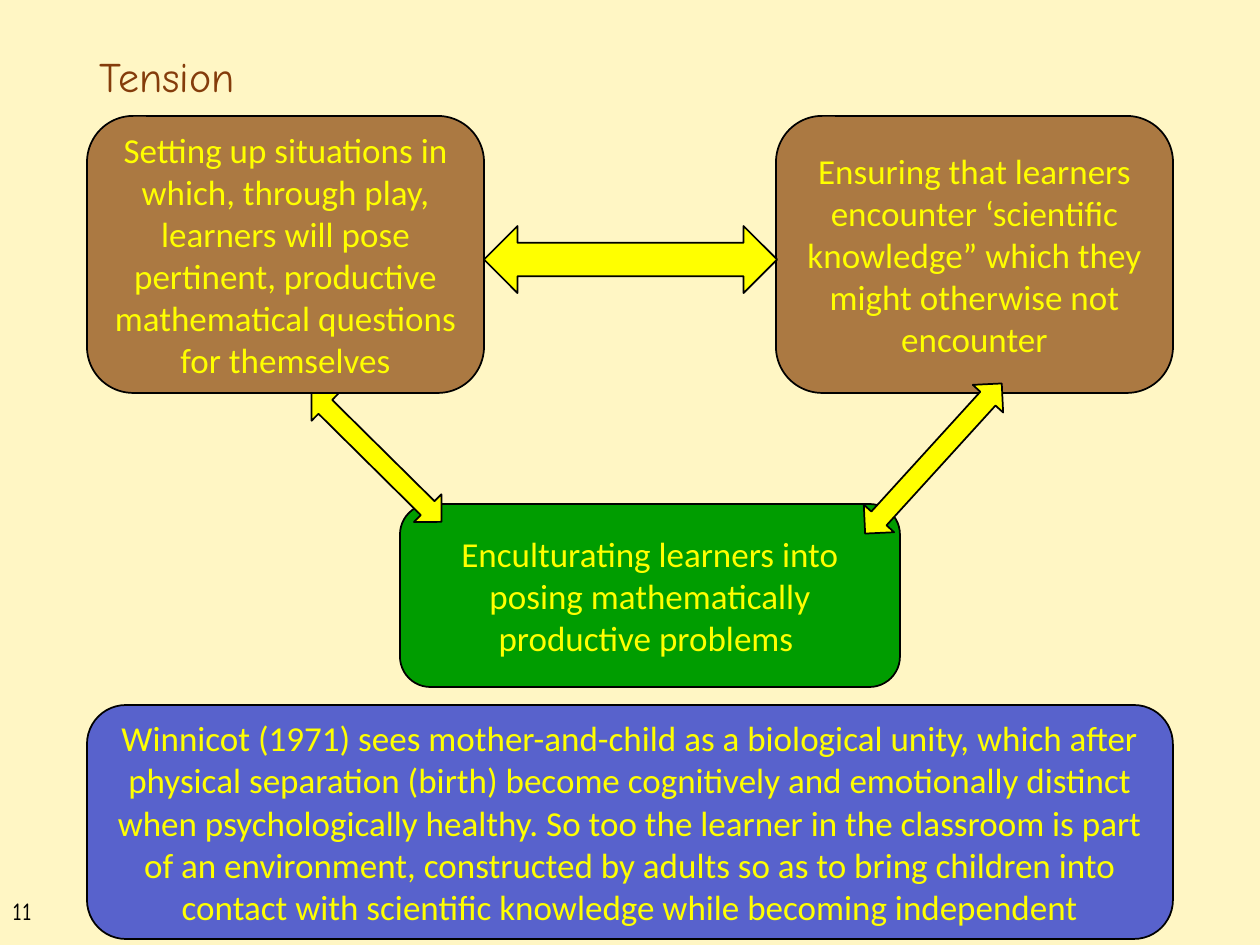
from pptx import Presentation
from pptx.dml.color import RGBColor
from pptx.enum.shapes import MSO_SHAPE
from pptx.enum.text import MSO_ANCHOR, PP_ALIGN
from pptx.util import Pt

PX = 914400 / 126
ROUND, ARROW = MSO_SHAPE.ROUNDED_RECTANGLE, MSO_SHAPE.LEFT_RIGHT_ARROW
TOP, MIDDLE = MSO_ANCHOR.TOP, MSO_ANCHOR.MIDDLE
LEFT, CENTER = PP_ALIGN.LEFT, PP_ALIGN.CENTER
CREAM = RGBColor(0xFF, 0xF6, 0xC4)
RUST = RGBColor(0x84, 0x3C, 0x0B)
BROWN = RGBColor(0xAB, 0x79, 0x42)
GREEN = RGBColor(0x00, 0x9D, 0x00)
BLUE = RGBColor(0x58, 0x62, 0xCC)
YELLOW = RGBColor(0xFF, 0xFF, 0x00)
BLACK = RGBColor(0x00, 0x00, 0x00)


def write(shape, text, font, size, color, align, anchor):
    frame = shape.text_frame
    frame.word_wrap = True
    frame.vertical_anchor = anchor
    para = frame.paragraphs[0]
    para.alignment = align
    run = para.add_run()
    run.text = text
    run.font.name = font
    run.font.size = Pt(size)
    run.font.color.rgb = color
    return para


def draw(kind, box, color):
    shape = slide.shapes.add_shape(kind, *[round(n * PX) for n in box])
    shape.shadow.inherit = False
    shape.fill.solid()
    shape.fill.fore_color.rgb = color
    shape.line.color.rgb = BLACK
    shape.line.width = Pt(1)
    return shape


deck = Presentation()
deck.slide_width = round(1260 * PX)
deck.slide_height = round(945 * PX)
slide = deck.slides.add_slide(deck.slide_layouts[5])
slide.background.fill.solid()
slide.background.fill.fore_color.rgb = CREAM

title = slide.shapes.title
title.left, title.top, title.width, title.height = [
    round(n * PX) for n in (87, 50, 1086, 90)]
para = write(title, "Tension", "Comic Neue", 24, RUST, LEFT, TOP)
para.line_spacing = 0.9

number = slide.shapes.add_textbox(*[round(n * PX) for n in (0, 890, 96, 43)])
write(number, "11", "Comic Neue", 14, BLACK, LEFT, TOP)

cards = [
    ((87, 116, 397, 277), BROWN,
     "Setting up situations in which, through play, learners will pose "
     "pertinent, productive mathematical questions for themselves"),
    ((776, 116, 397, 277), BROWN,
     "Ensuring that learners encounter ‘scientific knowledge” which they "
     "might otherwise not encounter"),
    ((400, 504, 500, 183), GREEN,
     "Enculturating learners into posing mathematically productive problems "),
    ((87, 705, 1086, 234), BLUE,
     "Winnicot (1971) sees mother-and-child as a biological unity, which after "
     "physical separation (birth) become cognitively and emotionally distinct "
     "when psychologically healthy. So too the learner in the classroom is part "
     "of an environment, constructed by adults so as to bring children into "
     "contact with scientific knowledge while becoming independent"),
]
for box, color, text in cards:
    card = draw(ROUND, box, color)
    write(card, text, "Calibri", 20, YELLOW, CENTER, MIDDLE)

arrows = [
    ((484, 226, 293, 67), 0),
    ((285, 438, 183, 39), 44.7),
    ((832, 438, 203, 41), 312.3),
]
for box, angle in arrows:
    arrow = draw(ARROW, box, YELLOW)
    arrow.rotation = angle

deck.save("out.pptx")
